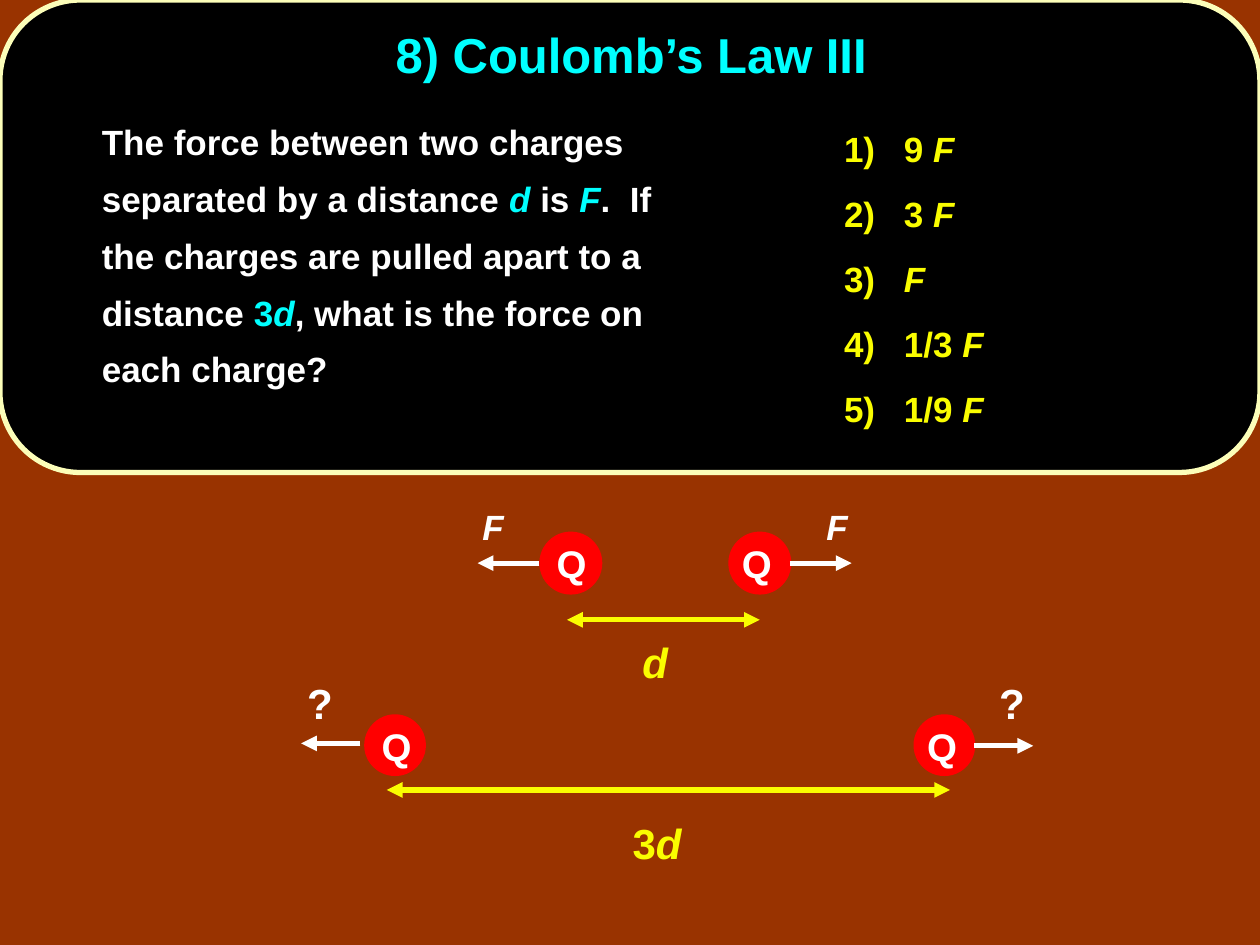
"""Build the Coulomb's law question slide."""
from lxml import etree
from pptx import Presentation
from pptx import util as u
from pptx.dml.color import RGBColor
from pptx.enum import shapes, text
from pptx.oxml.ns import qn

WHITE, YELLOW, CYAN, RED = "FFFFFF", "FAFD00", "00FFFF", "FF0000"
ANSWERS = ["9 ", "3 ", "", "1/3 ", "1/9 "]


def color(value):
    """Turn a hex string into a colour."""
    return RGBColor.from_string(value)


def set_all(target, values):
    """Set attributes from a dict of format values."""
    for name, value in values.items():
        setattr(target, name, value)


def paint(fill, value):
    """Make a fill solid."""
    fill.solid()
    fill.fore_color.rgb = color(value)


def add_text(page, bounds, paragraphs, size, wrap=False, middle=False, hanging=0, **layout):
    """Add a text box of paragraphs, each a list of (text, colour, italic)."""
    box = page.shapes.add_textbox(*map(u.Pt, bounds))
    anchor = text.MSO_ANCHOR.MIDDLE if middle else text.MSO_ANCHOR.TOP
    fit = text.MSO_AUTO_SIZE.NONE if wrap else text.MSO_AUTO_SIZE.SHAPE_TO_FIT_TEXT
    set_all(box.text_frame, {"word_wrap": wrap, "vertical_anchor": anchor, "auto_size": fit})
    for index, runs in enumerate(paragraphs):
        para = box.text_frame.paragraphs[0] if index == 0 else box.text_frame.add_paragraph()
        set_all(para, layout)
        if hanging:
            properties = para._p.get_or_add_pPr()
            properties.set("marL", str(u.Pt(hanging)))
            properties.set("indent", str(-u.Pt(hanging)))
        for words, hue, italic in runs:
            span = para.add_run()
            span.text = words
            set_all(span.font, {"name": "Arial", "size": u.Pt(size), "bold": True, "italic": italic})
            span.font.color.rgb = color(hue)
    return box


def add_shape(page, kind, bounds, fill, outline=None):
    """Add a filled preset shape with an optional 3 pt outline."""
    shape = page.shapes.add_shape(kind, *map(u.Pt, bounds))
    shape.shadow.inherit = False
    paint(shape.fill, fill)
    if outline:
        paint(shape.line.fill, outline)
        shape.line.width = u.Pt(3)
    else:
        shape.line.fill.background()
    return shape


def add_arrow(page, start, end, y, hue, ends=("tailEnd",)):
    """Add a horizontal arrow with heads at the given ends."""
    arrow = page.shapes.add_connector(
        shapes.MSO_CONNECTOR.STRAIGHT, *map(u.Pt, (start, y, end, y)))
    paint(arrow.line.fill, hue)
    arrow.line.width = u.Pt(3)
    for name in ends:
        etree.SubElement(arrow.line._get_or_add_ln(), qn(f"a:{name}"), type="triangle")
    etree.SubElement(arrow._element.spPr, qn("a:effectLst"))


def add_charge(page, left, top, size, label_left):
    """Add a charge disc with its letter."""
    add_shape(page, shapes.MSO_SHAPE.OVAL, (left, top, size, size), RED)
    add_text(page, (label_left, top + 1.2, 31.7, 33.8), [[("Q", WHITE, False)]], 22)


def add_distance(page, start, end, y, label, bounds):
    """Add a double-headed distance arrow and its label."""
    add_arrow(page, start, end, y, YELLOW, ("headEnd", "tailEnd"))
    add_text(page, bounds, [label], 24, middle=True,
             alignment=text.PP_ALIGN.CENTER, line_spacing=0.9)


def add_question(page):
    """Add the panel with title, question and answers."""
    panel = add_shape(page, shapes.MSO_SHAPE.ROUNDED_RECTANGLE,
                      (0, 0, 720, 270), "000000", "FCFEB9")
    panel.adjustments[0] = 0.17
    answers = [[(f"{number})\t{factor}", YELLOW, False), ("F", YELLOW, True)]
               for number, factor in enumerate(ANSWERS, 1)]
    add_text(page, (475.2, 61.9, 164.2, 190), answers, 20, wrap=True, hanging=34.2,
             line_spacing=1.3, space_before=u.Pt(6))
    question = [
        ("\tThe force between two charges separated by a distance ", WHITE, False),
        ("d", CYAN, True), (" is ", WHITE, False), ("F", CYAN, True),
        (".  If the charges are pulled apart to a distance ", WHITE, False),
        ("3", CYAN, False), ("d", CYAN, True),
        (", what is the force on each charge?", WHITE, False)]
    box = add_text(page, (19.4, 54.7, 375.8, 181.4), [question], 20, wrap=True,
                   hanging=31.7, line_spacing=1.35, space_before=u.Pt(10))
    box.text_frame.margin_top = u.Pt(6)
    add_text(page, (73.4, 0, 574.6, 66.2), [[("8) Coulomb’s Law III", CYAN, False)]], 28,
             wrap=True, middle=True, alignment=text.PP_ALIGN.CENTER, line_spacing=0.9)


def add_diagram(page):
    """Add the near and the far pair of charges."""
    for left, label_left in ((308.2, 311), (416.2, 416.9)):
        add_charge(page, left, 303.8, 36, label_left)
    for left, label_left in ((208.1, 211), (522, 522.7)):
        add_charge(page, left, 408.2, 35.3, label_left)
    for start, end, y in ((308.2, 272.9, 321.8), (451.4, 486.7, 321.8),
                          (205.9, 172.1, 424.8), (556.6, 590.4, 426.2)):
        add_arrow(page, start, end, y, WHITE)
    for left in (268.6, 465.1):
        add_text(page, (left, 285.1, 26.6, 31), [[("F", WHITE, True)]], 20)
    for left in (168.5, 563.8):
        add_text(page, (left, 383.8, 28.8, 36), [[("?", WHITE, False)]], 24)
    add_distance(page, 324, 434.2, 354.2, [("d", YELLOW, True)], (360, 363.6, 28.8, 33.1))
    add_distance(page, 221, 542.9, 451.4, [("3", YELLOW, False), ("d", YELLOW, True)],
                 (354.2, 466.6, 42.5, 33.1))


def main():
    """Build and save the deck."""
    deck = Presentation()
    set_all(deck, {"slide_width": u.Pt(720), "slide_height": u.Pt(540)})
    page = deck.slides.add_slide(deck.slide_layouts[6])
    paint(page.background.fill, "993300")
    add_question(page)
    add_diagram(page)
    deck.save("out.pptx")


if __name__ == "__main__":
    main()
